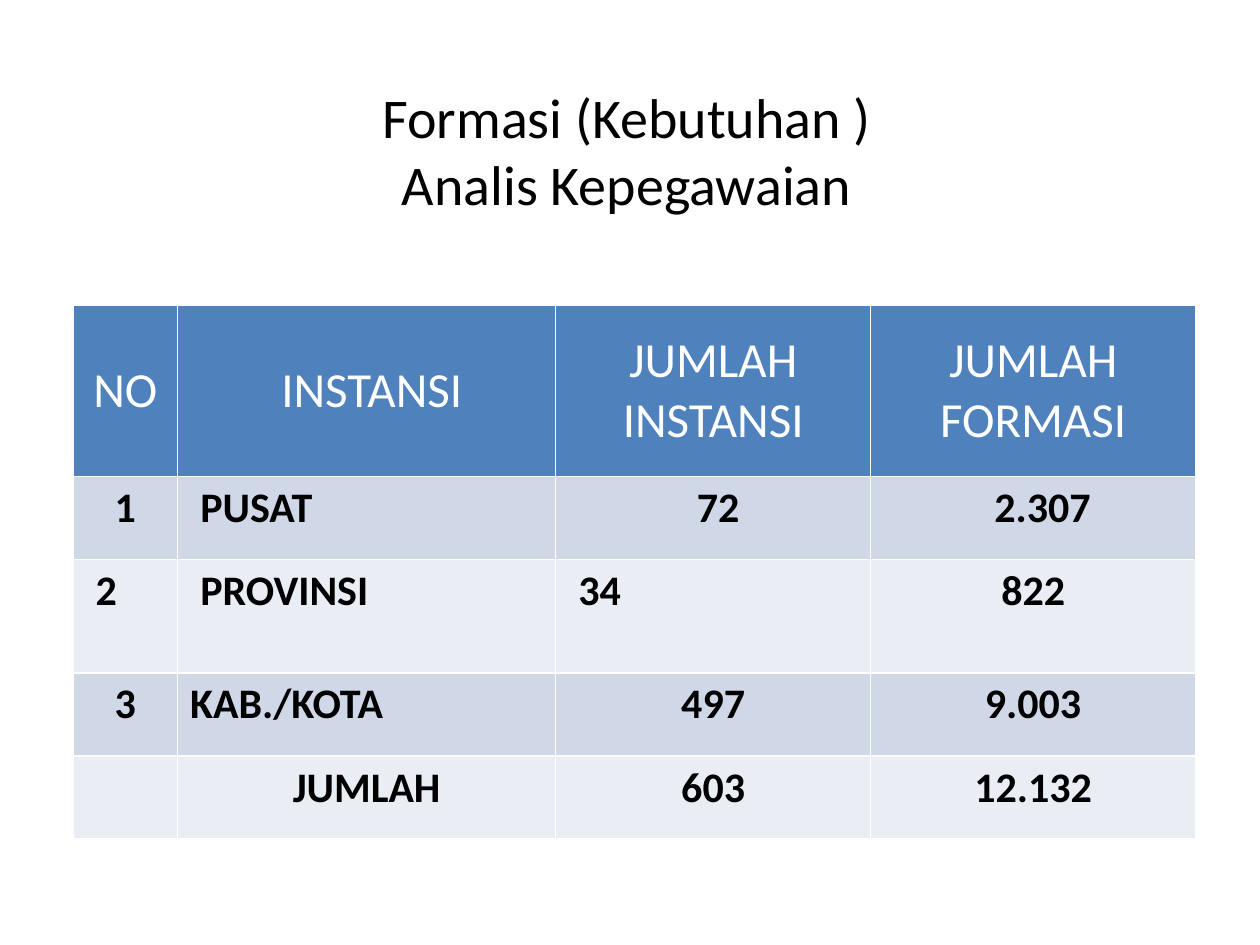
from dataclasses import dataclass

from pptx import Presentation
from pptx.dml.color import RGBColor
from pptx.enum.text import MSO_ANCHOR, PP_ALIGN
from pptx.util import Inches, Pt

LEFT, CENTER = PP_ALIGN.LEFT, PP_ALIGN.CENTER
MIDDLE, TOP = MSO_ANCHOR.MIDDLE, MSO_ANCHOR.TOP
TITLE_ONLY = 5
FONT = "Calibri"
BLACK, WHITE = "000000", "FFFFFF"
HEADER_FILL = "4F81BD"
BAND_FILLS = ("D0D8E8", "E9EDF4")
CELL_MARGIN = 0.1


@dataclass
class Entry:
    text: str
    align: PP_ALIGN = CENTER
    indent: float = 0  # extra left margin, inches


COLUMN_WIDTHS = (0.83, 3, 2.5, 2.58)
ROW_HEIGHTS = (1.36, 0.66, 0.9, 0.66, 0.66)
HEADER = (Entry("NO"), Entry("INSTANSI", indent=0.08),
          Entry("JUMLAH INSTANSI"), Entry("JUMLAH FORMASI"))
BODY = (
    (Entry("1"), Entry("PUSAT", LEFT, 0.08),
     Entry("72", indent=0.08), Entry("2.307", indent=0.15)),
    (Entry("2", LEFT, 0.08), Entry("PROVINSI", LEFT, 0.08),
     Entry("34", LEFT, 0.08), Entry("822")),
    (Entry("3"), Entry("KAB./KOTA", LEFT), Entry("497"), Entry("9.003")),
    (Entry(""), Entry("JUMLAH"), Entry("603"), Entry("12.132")),
)


def color(value: str) -> RGBColor:
    return RGBColor.from_string(value)


def format_paragraph(para, size: int, ink: str, bold: bool = False,
                     align: PP_ALIGN = CENTER) -> None:
    para.alignment = align
    para.font.name = FONT
    para.font.size = Pt(size)
    para.font.bold = bold
    para.font.color.rgb = color(ink)


def fill_row(table, index: int, entries: tuple[Entry, ...], fill: str,
             size: int, ink: str, bold: bool, anchor: MSO_ANCHOR) -> None:
    for column, entry in enumerate(entries):
        cell = table.cell(index, column)
        cell.fill.solid()
        cell.fill.fore_color.rgb = color(fill)
        cell.vertical_anchor = anchor
        cell.margin_left = Inches(CELL_MARGIN + entry.indent)
        cell.text = entry.text
        format_paragraph(cell.text_frame.paragraphs[0], size, ink, bold,
                         entry.align)


def add_title(slide) -> None:
    title = slide.shapes.title
    title.left, title.top = Inches(1), Inches(0.6)
    title.width, title.height = Inches(7.95), Inches(1.18)
    title.text_frame.text = "Formasi (Kebutuhan )\nAnalis Kepegawaian"
    for para in title.text_frame.paragraphs:
        format_paragraph(para, 32, BLACK)


def add_staffing_table(slide) -> None:
    table = slide.shapes.add_table(
        len(ROW_HEIGHTS), len(COLUMN_WIDTHS), Inches(0.58), Inches(2.42),
        Inches(sum(COLUMN_WIDTHS)), Inches(sum(ROW_HEIGHTS))).table
    for column, width in zip(table.columns, COLUMN_WIDTHS):
        column.width = Inches(width)
    for row, height in zip(table.rows, ROW_HEIGHTS):
        row.height = Inches(height)

    fill_row(table, 0, HEADER, HEADER_FILL, 28, WHITE, False, MIDDLE)
    for number, entries in enumerate(BODY):
        fill_row(table, number + 1, entries, BAND_FILLS[number % 2],
                 24, BLACK, True, TOP)


def main() -> None:
    deck = Presentation()
    deck.slide_width, deck.slide_height = Inches(10), Inches(7.5)
    slide = deck.slides.add_slide(deck.slide_layouts[TITLE_ONLY])
    add_title(slide)
    add_staffing_table(slide)
    deck.save("out.pptx")


if __name__ == "__main__":
    main()
